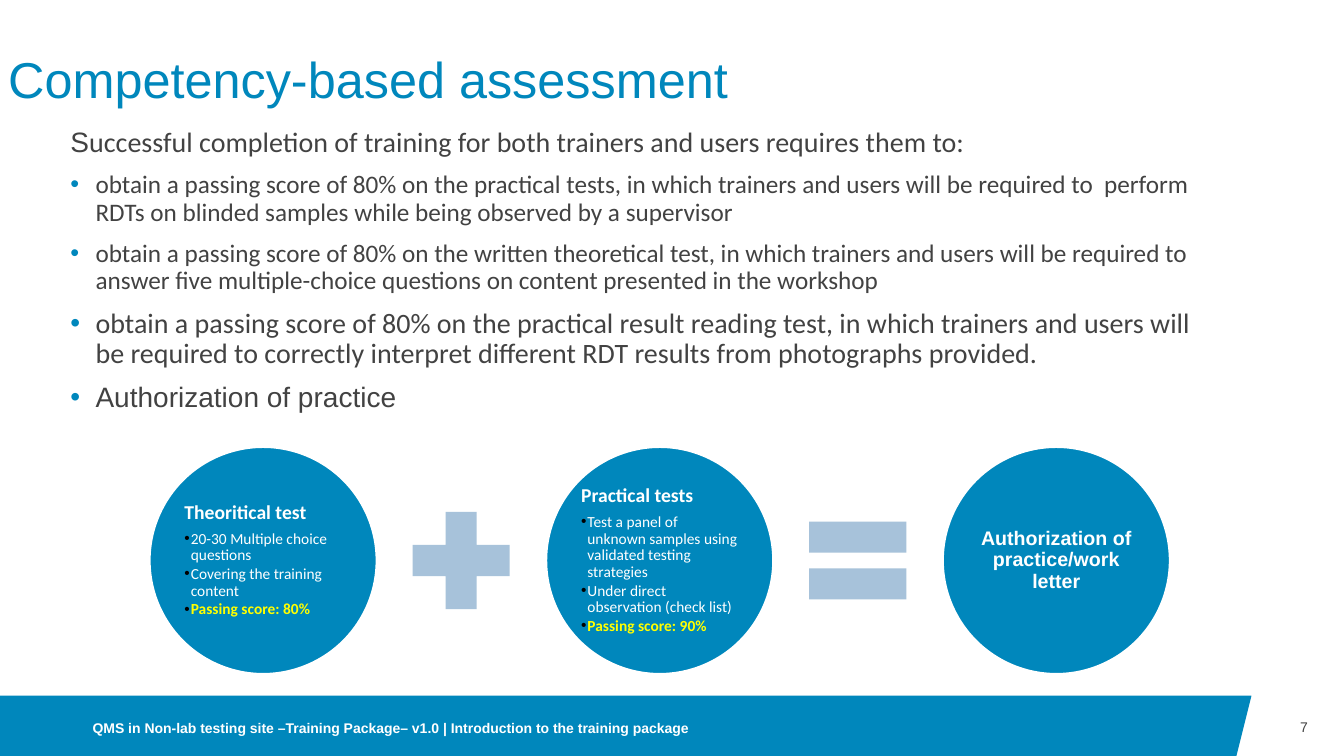
from lxml.etree import SubElement
from pptx import Presentation
from pptx.dml.color import RGBColor
from pptx.enum.shapes import MSO_SHAPE
from pptx.enum.text import MSO_ANCHOR, MSO_AUTO_SIZE, PP_ALIGN
from pptx.oxml.ns import qn
from pptx.util import Pt

BLUE, GRAY, PALE = "0087BC", "424242", "A7C2DA"
WHITE, YELLOW, BLACK = "FFFFFF", "FFFF00", "000000"

# Circle row: each circle is followed by its operator at the same step
CIRCLE_LEFT, CIRCLE_TOP, CIRCLE_SIZE = 106.6, 319, 162.7
OPERATOR_LEFT, OPERATOR_TOP, OPERATOR_SIZE = 282.2, 353.2, 94.4
STEP = 283.3


def color(hex_string):
    return RGBColor.from_string(hex_string)


def place(shape, left, top, width, height):
    shape.left, shape.top = Pt(left), Pt(top)
    shape.width, shape.height = Pt(width), Pt(height)


def set_frame(shape, anchor, inset_x=0, inset_y=0):
    frame = shape.text_frame
    frame.word_wrap = True
    frame.auto_size = MSO_AUTO_SIZE.NONE
    frame.vertical_anchor = anchor
    frame.margin_left = frame.margin_right = Pt(inset_x)
    frame.margin_top = frame.margin_bottom = Pt(inset_y)
    return frame


def add_run(paragraph, text, size=18, font="Calibri", fill=GRAY, bold=False):
    run = paragraph.add_run()
    run.text = text
    run.font.size, run.font.name, run.font.bold = Pt(size), font, bold
    run.font.color.rgb = color(fill)


def add_bullet(paragraph, bullet, indent):
    properties = paragraph._p.get_or_add_pPr()
    properties.set("marL", str(Pt(indent)))
    properties.set("indent", str(Pt(-indent)))
    bullet_color = SubElement(properties, qn("a:buClr"))
    SubElement(bullet_color, qn("a:srgbClr")).set("val", bullet)
    SubElement(properties, qn("a:buFont")).set("typeface", "Arial")
    SubElement(properties, qn("a:buChar")).set("char", "•")


def add_text(frame, text, align=PP_ALIGN.LEFT, spacing=0.9, before=0,
             bullet=None, indent=18, **run_format):
    """Write one paragraph, using the empty first one when it is free."""
    first = frame.paragraphs[0]
    paragraph = frame.add_paragraph() if first.runs else first
    paragraph.alignment = align
    paragraph.line_spacing = spacing
    paragraph.space_before = Pt(before)
    if bullet:
        add_bullet(paragraph, bullet, indent)
    add_run(paragraph, text, **run_format)
    return paragraph


def add_text_box(slide, left, top, width, height, anchor, inset_x=0, inset_y=0):
    box = slide.shapes.add_textbox(Pt(left), Pt(top), Pt(width), Pt(height))
    return set_frame(box, anchor, inset_x, inset_y)


def add_filled_shape(slide, kind, left, top, size, fill, line=None):
    shape = slide.shapes.add_shape(kind, Pt(left), Pt(top), Pt(size), Pt(size))
    shape.shadow.inherit = False
    shape.fill.solid()
    shape.fill.fore_color.rgb = color(fill)
    if line:
        shape.line.color.rgb = color(line)
        shape.line.width = Pt(2)
    else:
        shape.line.fill.background()
    return shape


def add_circle(slide, position):
    circle = add_filled_shape(slide, MSO_SHAPE.OVAL, CIRCLE_LEFT + position * STEP,
                              CIRCLE_TOP, CIRCLE_SIZE, BLUE, WHITE)
    return set_frame(circle, MSO_ANCHOR.MIDDLE, 1.4, 1.4)


def add_test_circle(slide, position, heading, points, score):
    frame = add_circle(slide, position)
    add_text(frame, heading, size=14, fill=WHITE, bold=True)
    for number, point in enumerate(points):
        add_text(frame, point, before=1.6 if number else 4.9, bullet=BLACK,
                 indent=4.5, size=11, fill=WHITE)
    add_text(frame, score, before=1.6, bullet=BLACK, indent=4.5, size=11,
             fill=YELLOW, bold=True)


def add_operator(slide, position, kind, adjustments):
    operator = add_filled_shape(slide, kind, OPERATOR_LEFT + position * STEP,
                                OPERATOR_TOP, OPERATOR_SIZE, PALE)
    for number, value in enumerate(adjustments):
        operator.adjustments[number] = value


def add_footer(slide):
    builder = slide.shapes.build_freeform(Pt(0), Pt(496.8))
    builder.add_line_segments([(Pt(894), Pt(496.8)), (Pt(882.7), Pt(542)),
                               (Pt(0), Pt(542))], close=True)
    banner = builder.convert_to_shape()
    banner.shadow.inherit = False
    banner.fill.solid()
    banner.fill.fore_color.rgb = color(BLUE)
    banner.line.fill.background()

    frame = add_text_box(slide, 66.2, 500.4, 576, 39.6, MSO_ANCHOR.MIDDLE)
    add_text(frame, "QMS in Non-lab testing site –Training Package– v1.0 | "
             "Introduction to the training package",
             spacing=1, size=10, font="Arial", fill=WHITE, bold=True)
    frame = add_text_box(slide, 894, 496.8, 40.3, 45.4, MSO_ANCHOR.MIDDLE)
    add_text(frame, "7", align=PP_ALIGN.RIGHT, spacing=1, size=10, font="Arial")


def add_title(slide):
    title = slide.shapes.title
    place(title, 5.8, 4.3, 828, 74.2)
    frame = set_frame(title, MSO_ANCHOR.BOTTOM)
    add_text(frame, "Competency-based assessment", size=36, font="Arial", fill=BLUE)


def add_requirements(slide):
    frame = add_text_box(slide, 43.2, 87.8, 828, 236.2, MSO_ANCHOR.TOP, 7.2, 3.6)
    opening = add_text(frame, "S", before=10, size=20, font="Arial")
    add_run(opening, "uccessful completion of training for both trainers and users "
            "requires them to:", size=20)
    requirements = [
        ("obtain a passing score of 80% on the practical tests, in which trainers and "
         "users will be required to  perform RDTs on blinded samples while being "
         "observed by a supervisor", 18, "Calibri"),
        ("obtain a passing score of 80% on the written theoretical test, in which "
         "trainers and users will be required to answer five multiple-choice questions "
         "on content presented in the workshop", 18, "Calibri"),
        ("obtain a passing score of 80% on the practical result reading test, in which "
         "trainers and users will be required to correctly interpret different RDT "
         "results from photographs provided.", 20, "Calibri"),
        ("Authorization of practice", 20, "Arial"),
    ]
    for text, size, font in requirements:
        add_text(frame, text, before=10, bullet=BLUE, size=size, font=font)


def add_equation(slide):
    add_test_circle(slide, 0, "Theoritical test",
                    ["20-30 Multiple choice questions", "Covering the training content"],
                    "Passing score: 80%")
    add_operator(slide, 0, MSO_SHAPE.MATH_PLUS, [0.235])
    add_test_circle(slide, 1, "Practical tests",
                    ["Test a panel of unknown samples using validated testing strategies",
                     "Under direct observation (check list)"],
                    "Passing score: 90%")
    add_operator(slide, 1, MSO_SHAPE.MATH_EQUAL, [0.235, 0.118])
    add_text(add_circle(slide, 2), "Authorization of practice/work letter",
             align=PP_ALIGN.CENTER, size=14, font="Arial", fill=WHITE, bold=True)


def main():
    presentation = Presentation()
    presentation.slide_width, presentation.slide_height = Pt(960), Pt(540)
    slide = presentation.slides.add_slide(presentation.slide_layouts[5])
    add_footer(slide)
    add_title(slide)
    add_requirements(slide)
    add_equation(slide)
    presentation.save("out.pptx")


if __name__ == "__main__":
    main()
